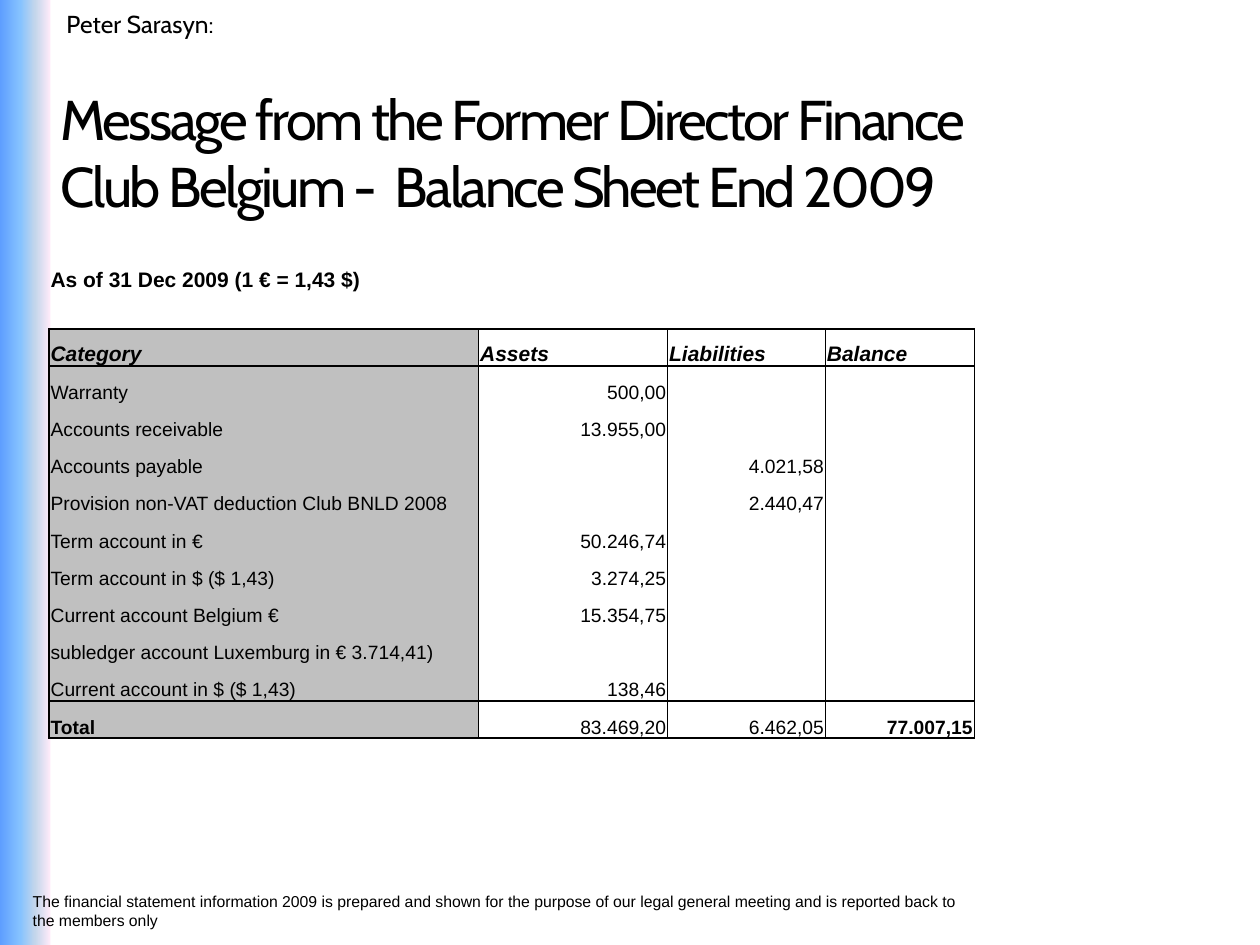
from lxml.etree import SubElement
from pptx import Presentation
from pptx.dml.color import RGBColor
from pptx.enum.shapes import MSO_SHAPE as Shape
from pptx.enum.text import MSO_ANCHOR as Anchor, PP_ALIGN as Align
from pptx.oxml.ns import qn
from pptx.util import Cm, Pt

COLORS = {"ink": "000000", "category": "C0C0C0"}
BAND_STOPS = [(0, "5E9EFF"), (40, "85C2FF"), (70, "C4D6EB"), (100, "FFEBFA")]
NO_STYLE = "{2D5ABB26-0587-4C30-8999-92F81FD0307C}"

SPEAKER = "Peter Sarasyn:"
TITLE = ["Message from the Former Director Finance",
         "Club Belgium -  Balance Sheet End 2009"]
FOOTNOTE = ("The financial statement information 2009 is prepared and shown for the purpose "
            "of our legal general meeting and is reported back to the members only")
CAPTION = "As of 31 Dec 2009 (1 € = 1,43 $)"
HEADER = ["Category", "Assets", "Liabilities", "Balance"]
ACCOUNTS = [
    ["Warranty", "500,00", "", ""],
    ["Accounts receivable", "13.955,00", "", ""],
    ["Accounts payable", "", "4.021,58", ""],
    ["Provision non-VAT deduction Club BNLD 2008", "", "2.440,47", ""],
    ["Term account in €", "50.246,74", "", ""],
    ["Term account in $ ($ 1,43)", "3.274,25", "", ""],
    ["Current account Belgium €", "15.354,75", "", ""],
    ["subledger account Luxemburg in € 3.714,41)", "", "", ""],
    ["Current account in $ ($ 1,43)", "138,46", "", ""],
]
TOTAL = ["Total", "83.469,20", "6.462,05", "77.007,15"]
ROWS = [[CAPTION, "", "", ""], [""] * 4, HEADER, *ACCOUNTS, TOTAL]
HEADER_ROW, TOTAL_ROW = 2, len(ROWS) - 1
COLUMN_WIDTHS = [8.66, 3.81, 3.18, 3.0]
FIRST_ROW_HEIGHT, ROW_HEIGHT = 0.72, 0.75


def add_span(para, text, size, font, bold=False, italic=False):
    span = para.add_run()
    span.text = text
    span.font.size, span.font.name = Pt(size), font
    span.font.bold, span.font.italic = bold, italic
    span.font.color.rgb = RGBColor.from_string(COLORS["ink"])
    return span


def add_text(page, text, area, size, font, wrap):
    frame = page.shapes.add_textbox(*map(Cm, area)).text_frame
    frame.word_wrap = wrap
    add_span(frame.paragraphs[0], text, size, font)


def add_band(page, height):
    band = page.shapes.add_shape(Shape.RECTANGLE, 0, 0, Cm(1.02), height)
    band.shadow.inherit = False
    band.line.fill.background()
    band.fill.gradient()
    band.fill.gradient_angle = 0
    stops = band.element.spPr.find(".//" + qn("a:gsLst"))
    for stop in list(stops):
        stops.remove(stop)
    for position, color in BAND_STOPS:
        stop = SubElement(stops, qn("a:gs"), pos=str(position * 1000))
        SubElement(stop, qn("a:srgbClr"), val=color)


def fill_title(title):
    title.left, title.top, title.width, title.height = map(Cm, (0.97, 1.57, 20.47, 1.78))
    frame = title.text_frame
    frame.word_wrap = True
    frame.vertical_anchor = Anchor.TOP
    para = frame.paragraphs[0]
    para.alignment = Align.LEFT
    for index, line in enumerate(TITLE):
        if index:
            para.add_line_break()
        span = add_span(para, line, 32, "Cabin")
        span.font._element.set("spc", "-150")


def border_sides(row):
    if row in (HEADER_ROW, TOTAL_ROW):
        return "LRTB"
    if row < HEADER_ROW:
        return "B" if row == HEADER_ROW - 1 else ""
    return "LR" + "T" * (row == HEADER_ROW + 1) + "B" * (row == TOTAL_ROW - 1)


def draw_borders(cell, sides):
    properties = cell._tc.get_or_add_tcPr()
    for side in "LRTB":
        line = SubElement(properties, qn("a:ln" + side), w=str(Pt(1)))
        if side in sides:
            fill = SubElement(line, qn("a:solidFill"))
            SubElement(fill, qn("a:srgbClr"), val=COLORS["ink"])
        else:
            SubElement(line, qn("a:noFill"))


def fill_cell(cell, text, row, column):
    cell.margin_left = cell.margin_right = cell.margin_top = Cm(0.03)
    cell.margin_bottom = 0
    cell.vertical_anchor = Anchor.BOTTOM
    draw_borders(cell, border_sides(row))
    if column == 0 and row >= HEADER_ROW:
        cell.fill.solid()
        cell.fill.fore_color.rgb = RGBColor.from_string(COLORS["category"])
    else:
        cell.fill.background()
    para = cell.text_frame.paragraphs[0]
    if not text:
        SubElement(para._p, qn("a:endParaRPr"), sz="1100")
        return
    heading = row <= HEADER_ROW
    if column and not heading:
        para.alignment = Align.RIGHT
    cell.text_frame.word_wrap = row > 0
    bold = heading or (row == TOTAL_ROW and column in (0, 3))
    add_span(para, text, 12 if heading else 11, "Arial", bold, row == HEADER_ROW)


def add_balance_sheet(page):
    height = FIRST_ROW_HEIGHT + ROW_HEIGHT * TOTAL_ROW
    area = (0.99, 5.16, sum(COLUMN_WIDTHS), height)
    table = page.shapes.add_table(len(ROWS), len(HEADER), *map(Cm, area)).table
    table.first_row = table.horz_banding = False
    table._tbl.tblPr.find(qn("a:tableStyleId")).text = NO_STYLE
    for column, width in zip(table.columns, COLUMN_WIDTHS):
        column.width = Cm(width)
    for row, texts in enumerate(ROWS):
        table.rows[row].height = Cm(ROW_HEIGHT if row else FIRST_ROW_HEIGHT)
        for column, text in enumerate(texts):
            fill_cell(table.cell(row, column), text, row, column)


def main():
    deck = Presentation()
    deck.slide_width, deck.slide_height = Cm(25.4), Cm(19.05)
    page = deck.slides.add_slide(deck.slide_layouts[5])
    add_band(page, deck.slide_height)
    fill_title(page.shapes.title)
    add_text(page, FOOTNOTE, (0.41, 17.86, 19.25, 1.02), 9, "Arial", True)
    add_balance_sheet(page)
    add_text(page, SPEAKER, (1.09, 0.05, 3.48, 0.86), 14, "Cabin", False)
    deck.save("out.pptx")


if __name__ == "__main__":
    main()
